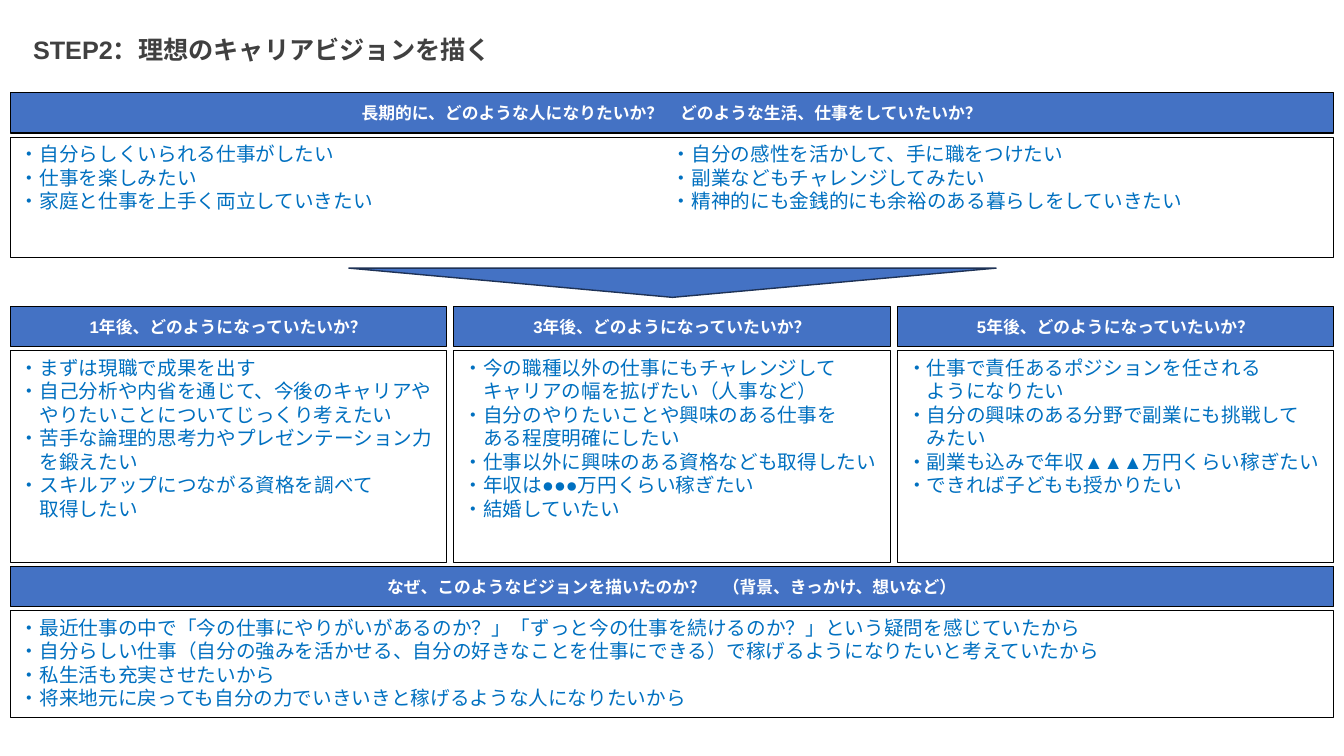
from dataclasses import dataclass

from lxml import etree
from pptx import Presentation
from pptx.dml.color import RGBColor
from pptx.enum import shapes, text
from pptx.oxml.ns import qn
from pptx.util import Inches, Pt


@dataclass(frozen=True)
class Theme:
    font: str = "Arial"
    blue: str = "4472C4"
    navy: str = "1E3256"
    ink: str = "0070C0"
    gray: str = "404040"
    white: str = "FFFFFF"
    black: str = "000000"
    title: int = 18
    head: int = 12
    body: int = 14


THEME = Theme()
LEFT, WIDTH, GAP = 0.1, 13.13, 0.07
HEAD, STEP = 0.4, 0.44  # header height, header top to body top

GOALS = [
    "・自分らしくいられる仕事がしたい",
    "・仕事を楽しみたい",
    "・家庭と仕事を上手く両立していきたい",
    "・自分の感性を活かして、手に職をつけたい",
    "・副業などもチャレンジしてみたい",
    "・精神的にも金銭的にも余裕のある暮らしをしていきたい",
]
YEARS = {
    1: [
        "・まずは現職で成果を出す",
        "・自己分析や内省を通じて、今後のキャリアや",
        "　やりたいことについてじっくり考えたい",
        "・苦手な論理的思考力やプレゼンテーション力",
        "　を鍛えたい",
        "・スキルアップにつながる資格を調べて",
        "　取得したい",
    ],
    3: [
        "・今の職種以外の仕事にもチャレンジして",
        "　キャリアの幅を拡げたい（人事など）",
        "・自分のやりたいことや興味のある仕事を",
        "　ある程度明確にしたい",
        "・仕事以外に興味のある資格なども取得したい",
        "・年収は●●●万円くらい稼ぎたい",
        "・結婚していたい",
    ],
    5: [
        "・仕事で責任あるポジションを任される",
        "　ようになりたい",
        "・自分の興味のある分野で副業にも挑戦して",
        "　みたい",
        "・副業も込みで年収▲▲▲万円くらい稼ぎたい",
        "・できれば子どもも授かりたい",
    ],
}
REASONS = [
    "・最近仕事の中で「今の仕事にやりがいがあるのか？」「ずっと今の仕事を続けるのか？」という疑問を感じていたから",
    "・自分らしい仕事（自分の強みを活かせる、自分の好きなことを仕事にできる）で稼げるようになりたいと考えていたから",
    "・私生活も充実させたいから",
    "・将来地元に戻っても自分の力でいきいきと稼げるような人になりたいから",
]


def write(frame, lines, size, color, bold=False, align=text.PP_ALIGN.LEFT):
    for i, line in enumerate(lines):
        para = frame.add_paragraph() if i else frame.paragraphs[0]
        para.text = line
        para.alignment = align
        font = para.font
        font.size, font.bold, font.name = Pt(size), bold, THEME.font
        font.color.rgb = RGBColor.from_string(color)
        # East Asian characters take the same typeface
        props = para._p.pPr.find(qn("a:defRPr"))
        etree.SubElement(props, qn("a:ea")).set("typeface", THEME.font)


def draw(slide, kind, box, fill, line, weight):
    shape = slide.shapes.add_shape(kind, *map(Inches, box))
    shape.shadow.inherit = False
    shape.fill.solid()
    shape.fill.fore_color.rgb = RGBColor.from_string(fill)
    shape.line.color.rgb = RGBColor.from_string(line)
    shape.line.width = Pt(weight)
    return shape


def panel(slide, box, head, lines, cols=1):
    """Header bar with a bordered list under it, filling the box."""
    x, y, w, h = box
    rect = shapes.MSO_SHAPE.RECTANGLE
    bar = draw(slide, rect, (x, y, w, HEAD), THEME.blue, THEME.black, 0.75)
    frame = bar.text_frame
    frame.word_wrap = False
    frame.vertical_anchor = text.MSO_ANCHOR.MIDDLE
    write(frame, [head], THEME.head, THEME.white, True, text.PP_ALIGN.CENTER)

    area = (x, y + STEP, w, h - STEP)
    body = draw(slide, rect, area, THEME.white, THEME.black, 0.75)
    frame = body.text_frame
    frame.word_wrap = True
    frame.vertical_anchor = text.MSO_ANCHOR.TOP
    write(frame, lines, THEME.body, THEME.ink)
    if cols > 1:
        frame._txBody.bodyPr.set("numCol", str(cols))
        frame.margin_bottom = Inches(0.35)  # leaves three lines a column


def years(slide, box):
    x, y, w, h = box
    wide = (w - GAP * (len(YEARS) - 1)) / len(YEARS)
    for i, (year, lines) in enumerate(YEARS.items()):
        part = (x + i * (wide + GAP), y, wide, h)
        panel(slide, part, f"{year}年後、どのようになっていたいか？", lines)


def arrow(slide, box):
    kind = shapes.MSO_SHAPE.ISOSCELES_TRIANGLE
    draw(slide, kind, box, THEME.blue, THEME.navy, 1).rotation = 180


def title(slide, box):
    frame = slide.shapes.add_textbox(*map(Inches, box)).text_frame
    frame.word_wrap = True
    write(frame, ["STEP2：理想のキャリアビジョンを描く"],
          THEME.title, THEME.gray, True)


def main():
    deck = Presentation()
    deck.slide_width, deck.slide_height = Inches(13.33), Inches(7.5)
    slide = deck.slides.add_slide(deck.slide_layouts[6])
    title(slide, (0.23, 0.29, 7.86, 0.4))
    panel(slide, (LEFT, 0.92, WIDTH, 1.64),
          "長期的に、どのような人になりたいか？　どのような生活、仕事をしていたいか？",
          GOALS, cols=2)
    arrow(slide, (3.46, 2.66, 6.42, 0.29))
    years(slide, (LEFT, 3.04, WIDTH, 2.54))
    panel(slide, (LEFT, 5.62, WIDTH, 1.5),
          "なぜ、このようなビジョンを描いたのか？　（背景、きっかけ、想いなど）",
          REASONS)
    deck.save("out.pptx")


if __name__ == "__main__":
    main()
